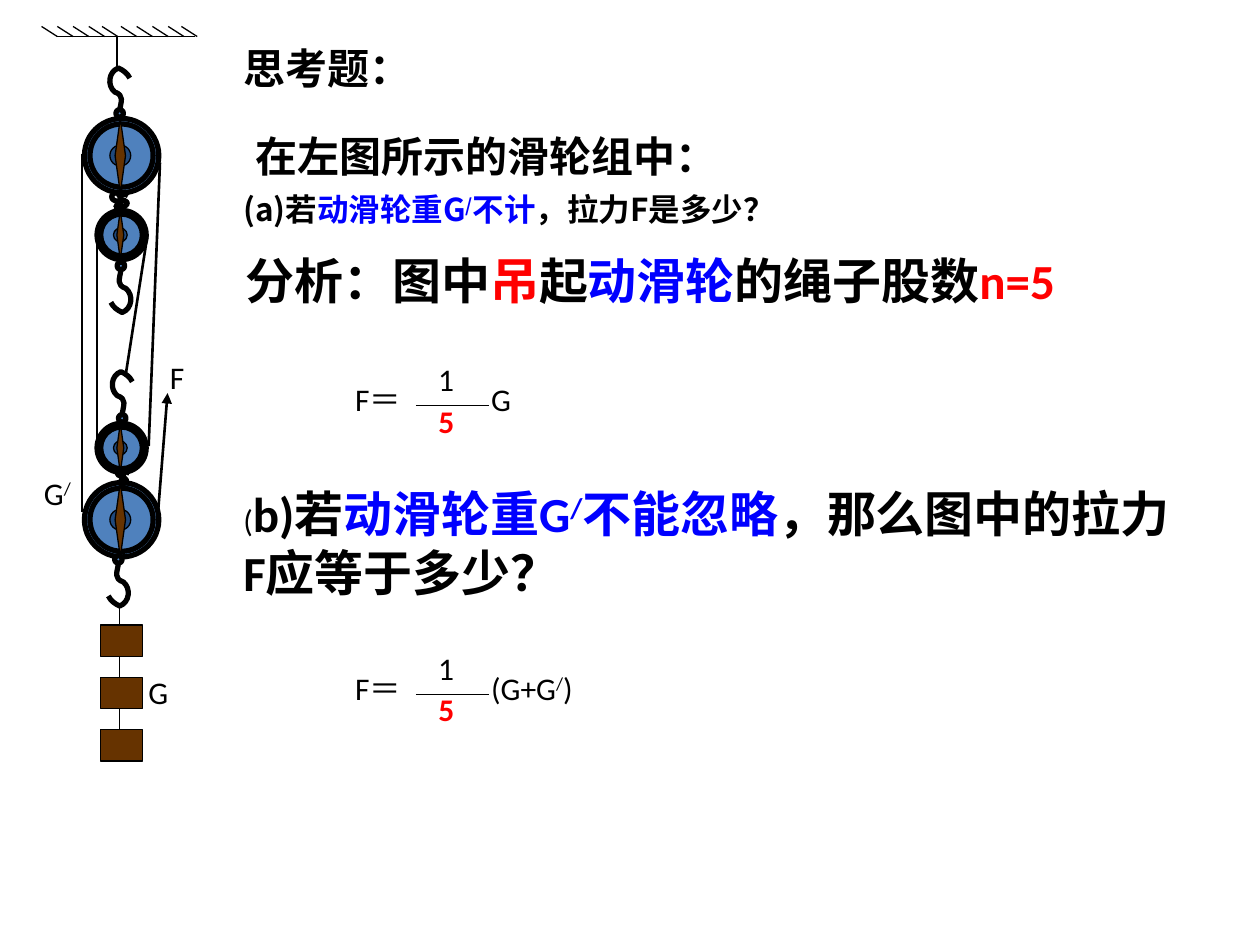
from lxml import etree
from pptx import Presentation
from pptx.dml.color import RGBColor
from pptx.enum import shapes, text
from pptx.oxml import ns
from pptx.util import Inches, Pt

BLACK = RGBColor(0x00, 0x00, 0x00)
BLUE = RGBColor(0x00, 0x00, 0xFF)
RED = RGBColor(0xFF, 0x00, 0x00)
WHEEL = RGBColor(0x4F, 0x81, 0xBD)
HUB = RGBColor(0x1F, 0x49, 0x7D)
BROWN = RGBColor(0x66, 0x33, 0x00)
LATIN, CHINESE = "Calibri", "Noto Sans CJK SC"
OVAL, DIAMOND = shapes.MSO_SHAPE.OVAL, shapes.MSO_SHAPE.DIAMOND
TEXT_LEFT = 11 / 6

presentation = Presentation()
presentation.slide_width, presentation.slide_height = Inches(10), Inches(7.5)
slide = presentation.slides.add_slide(presentation.slide_layouts[5])


def add_line(x1, y1, x2, y2, width=0.75):
    line = slide.shapes.add_connector(
        shapes.MSO_CONNECTOR.STRAIGHT, Inches(x1), Inches(y1), Inches(x2), Inches(y2))
    line.line.color.rgb = BLACK
    line.line.width = Pt(width)
    etree.SubElement(line._element.spPr, ns.qn("a:effectLst"))
    return line


def add_solid(kind, left, top, width, height, fill, weight=0.75):
    shape = slide.shapes.add_shape(
        kind, Inches(left), Inches(top), Inches(width), Inches(height))
    shape.shadow.inherit = False
    shape.fill.solid()
    shape.fill.fore_color.rgb = fill
    shape.line.color.rgb = BLACK
    shape.line.width = Pt(weight)


# Ropes
for rope in [(1, 2.96, 1.17, 1.87), (0.77, 1.87, 0.77, 3.62),
             (1.18, 3.54, 1.27, 1.29), (0.65, 1.22, 0.65, 4.06)]:
    add_line(*rope, width=1.5)

# Pulleys: rim, wheel, hub and axle plate around one centre
for left, top, size in [(0.67, 0.94, 0.59), (0.77, 1.67, 0.39),
                        (0.77, 3.36, 0.39), (0.67, 3.83, 0.59)]:
    for kind, shift, wide, high, fill, weight in [
            (OVAL, 0, 1, 1, WHEEL, 3), (OVAL, 0, 0.85, 0.85, WHEEL, 3),
            (OVAL, -0.01, 0.28, 0.28, HUB, 0.75), (DIAMOND, -0.01, 0.14, 1, BROWN, 0.75)]:
        add_solid(kind, left + shift + size * (1 - wide) / 2, top + size * (1 - high) / 2,
                  size * wide, size * high, fill, weight)

# Rings between pulleys and hooks
for ring in [(0.92, 1.65, 0.05, 0.02), (0.93, 2.08, 0.06, 0.06), (0.94, 1.54, 0.04, 0.01),
             (0.92, 0.87, 0.06, 0.06), (0.91, 4.41, 0.06, 0.06), (0.96, 3.81, 0.04, 0.01),
             (0.95, 3.74, 0.03, 0.01), (0.94, 3.29, 0.06, 0.06)]:
    add_solid(OVAL, *ring, WHEEL, 3)

# Hooks: one curve of three cubic pieces; negative scales turn it upwards
HOOK = [(-0.01, 0.08), (-0.04, 0.12), (0.04, 0.15), (0.10, 0.20), (0.09, 0.31),
        (0.01, 0.34), (-0.03, 0.32), (-0.06, 0.30), (-0.08, 0.26)]
for x, y, scale_x, scale_y in [
        (0.95, 1.65, -0.83, -0.37), (0.96, 2.14, 1, 1), (0.96, 1.55, 0.65, 0.27),
        (0.95, 0.88, -1, -1), (0.94, 4.47, 1, 1), (0.98, 3.81, -0.6, -0.21),
        (0.97, 3.76, 0.45, 0.24), (0.97, 3.29, -1, -1)]:
    builder = slide.shapes.build_freeform(Inches(x), Inches(y))
    builder.add_line_segments(
        [(Inches(x + scale_x * dx), Inches(y + scale_y * dy)) for dx, dy in HOOK], close=False)
    hook = builder.convert_to_shape()
    hook.shadow.inherit = False
    hook.fill.background()
    hook.line.color.rgb = BLACK
    hook.line.width = Pt(3)
    # Each three points become one cubic piece
    outline = next(hook._element.iter(ns.qn("a:path")))
    segments = outline.findall(ns.qn("a:lnTo"))
    for first in range(0, len(segments), 3):
        curve = etree.SubElement(outline, ns.qn("a:cubicBezTo"))
        for segment in segments[first:first + 3]:
            curve.append(segment[0])
            outline.remove(segment)

# Weights hanging on cords
for index in range(3):
    top = 4.96 + 0.415 * index
    add_solid(shapes.MSO_SHAPE.RECTANGLE, 0.8, top, 0.33, 0.25, BROWN)
    add_line(0.95, top - 0.165, 0.95, top)

# Ceiling with hatching and hanger
add_line(0.45, 0.29, 1.55, 0.29)
for start in (0.33, 0.96):
    for index in range(5):
        left = start + (0.48 if index == 4 else 0.125 * index)
        add_line(left + 0.125, 0.29, left, 0.21)
add_line(0.93, 0.29, 0.93, 0.54, 1.5)

# Pulling force arrow
arrow = add_line(1.25, 4.12, 1.33, 3.12, 1.5)
etree.SubElement(arrow.line._get_or_add_ln(), ns.qn("a:tailEnd"), type="triangle")

# Texts: box, size, bold, runs of (wording, colour); a lone "/" is raised
texts = [
    ((TEXT_LEFT, 0.29, 1.5, 0.5), 24, True, [("思考题：", BLACK)]),
    ((1.93, 0.99, 5.86, 0.5), 24, True, [("在左图所示的滑轮组中：", BLACK)]),
    ((TEXT_LEFT, 1.46, 6, 0.5), 18, True,
     [("(a)若", BLACK), ("动滑轮重G", BLUE), ("/", BLUE), ("不计", BLUE),
      ("，拉力F是多少？", BLACK)]),
    ((1.85, 1.94, 7.33, 0.57), 28, True,
     [("分析：图中", BLACK), ("吊", RED), ("起", BLACK), ("动滑轮", BLUE),
      ("的绳子股数", BLACK), ("n=5", RED)]),
    ((TEXT_LEFT, 3.79, 7.67, 1.03), 28, True,
     [("(", BLACK), ("b)若", BLACK), ("动滑轮重G", BLUE), ("/", BLUE), ("不能忽略", BLUE),
      ("，那么图中的拉力F应等于多少？", BLACK)]),
    ((0.25, 3.71, 0.58, 0.5), 18, False, [("G", BLACK), ("/", BLACK)]),
    ((1.08, 5.29, 0.58, 0.5), 18, False, [("G", BLACK)]),
    ((1.25, 2.79, 0.42, 0.5), 18, False, [("F", BLACK)]),
]

# Formulas: fraction bar, then the parts around it
for bar_y, width, load in [(3.22, 0.5, [("G", BLACK)]),
                           (5.51, 1.33, [("(G+G", BLACK), ("/", BLACK), (")", BLACK)])]:
    add_line(3.3, bar_y, 3.88, bar_y)
    texts += [
        ((3.38, bar_y - 0.41, 0.33, 0.5), 18, False, [("1", BLACK)]),
        ((3.38, bar_y - 0.08, 0.42, 0.5), 18, True, [("5", RED)]),
        ((2.72, bar_y - 0.25, 2.42, 0.5), 18, False, [("F＝", BLACK)]),
        ((3.8, bar_y - 0.25, width, 0.5), 18, False, load),
    ]

# The first text is the title, the others are text boxes
for index, (box, size, bold, runs) in enumerate(texts):
    left, top, width, height = [Inches(value) for value in box]
    if index == 0:
        shape = slide.shapes.title
        shape.left, shape.top, shape.width, shape.height = left, top, width, height
    else:
        shape = slide.shapes.add_textbox(left, top, width, height)
    frame = shape.text_frame
    frame.word_wrap = True
    frame.auto_size = text.MSO_AUTO_SIZE.NONE
    frame.vertical_anchor = text.MSO_ANCHOR.TOP
    paragraph = frame.paragraphs[0]
    paragraph.alignment = text.PP_ALIGN.LEFT
    for wording, color in runs:
        run = paragraph.add_run()
        run.text = wording
        opening = wording == "("
        run.font.size = Pt(18 if opening else size)
        run.font.bold = bold and not opening
        run.font.color.rgb = color
        run.font.name = CHINESE if runs[0][0].startswith("(a)") else LATIN
        properties = run._r.get_or_add_rPr()
        etree.SubElement(properties, ns.qn("a:ea"), typeface=CHINESE)
        if wording == "/":
            properties.set("baseline", "30000")

presentation.save("out.pptx")
